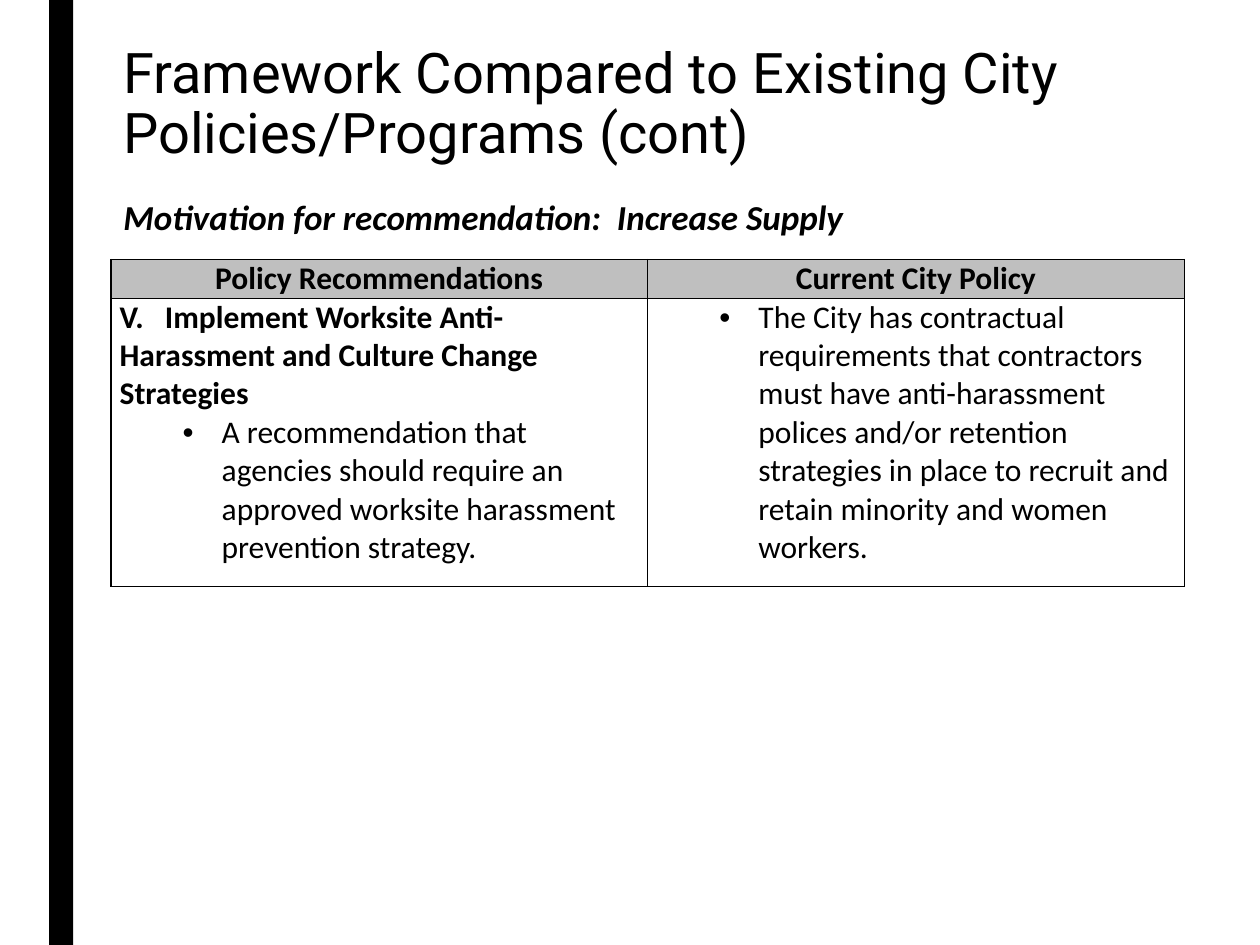
import pptx
import pptx.dml.color
import pptx.enum.shapes
import pptx.enum.text
import pptx.oxml
import pptx.oxml.ns
import pptx.util
from pptx.util import Inches

BLACK = "000000"
HEADER_GRAY = "BFBFBF"
HEADERS = ["Policy Recommendations", "Current City Policy"]
STRATEGY = "V.\tImplement Worksite Anti-Harassment and Culture Change Strategies"
RECOMMENDATION = (
    "A recommendation that agencies should require an approved worksite "
    "harassment prevention strategy."
)
CITY_POLICY = (
    "The City has contractual requirements that contractors must have "
    "anti-harassment polices and/or retention strategies in place to recruit "
    "and retain minority and women workers."
)


def color(hex_value):
    """Return the colour for a hex string."""
    return pptx.dml.color.RGBColor.from_string(hex_value)


def add_xml(parent, tag, attributes="", inner=""):
    """Append a DrawingML element to parent."""
    namespace = pptx.oxml.ns.nsdecls("a")
    parent.append(pptx.oxml.parse_xml(
        f"<a:{tag} {namespace} {attributes}>{inner}</a:{tag}>"))


def format_paragraph(paragraph, size, font="Calibri", bold=False, italic=False):
    """Style every run of a paragraph."""
    for run in paragraph.runs:
        run.font.name = font
        run.font.size = pptx.util.Pt(size)
        run.font.bold = bold
        run.font.italic = italic
        run.font.color.rgb = color(BLACK)


def add_side_bar(slide, left, top, width, height):
    """Draw the vertical black bar."""
    bar = slide.shapes.add_shape(
        pptx.enum.shapes.MSO_SHAPE.RECTANGLE, left, top, width, height)
    bar.shadow.inherit = False
    bar.fill.solid()
    bar.fill.fore_color.rgb = color(BLACK)
    bar.line.fill.background()


def add_heading(slide, box, text, size, line_spacing=None, **style):
    """Place a vertically centred line of heading text in a box."""
    heading = slide.shapes.add_textbox(*box).text_frame
    heading.word_wrap = True
    heading.vertical_anchor = pptx.enum.text.MSO_ANCHOR.MIDDLE
    heading.text = text
    heading.paragraphs[0].line_spacing = line_spacing
    format_paragraph(heading.paragraphs[0], size, **style)


def format_cell(cell, edges, fill=None):
    """Set a cell's margins, border widths by side and fill."""
    cell.margin_left = cell.margin_right = Inches(0.07)
    cell.margin_top = cell.margin_bottom = 0
    properties = cell._tc.get_or_add_tcPr()
    for side, points in edges.items():
        add_xml(properties, f"ln{side}", f'w="{pptx.util.Pt(points)}"',
                f'<a:solidFill><a:srgbClr val="{BLACK}"/></a:solidFill>')
    if fill:
        cell.fill.solid()
        cell.fill.fore_color.rgb = color(fill)
    else:
        cell.fill.background()


def add_bullet(paragraph, text):
    """Fill a paragraph as an indented bullet."""
    paragraph.text = text
    paragraph.level = 1
    properties = paragraph._p.get_or_add_pPr()
    properties.set("marL", str(Inches(0.81)))
    properties.set("indent", str(Inches(-0.31)))
    add_xml(properties, "buFont", 'typeface="Arial"')
    add_xml(properties, "buChar", 'char="•"')
    format_paragraph(paragraph, 18)


def add_policy_table(slide, left, top, width, height):
    """Build the comparison of recommendations and city policy."""
    table = slide.shapes.add_table(2, 2, left, top, width, height).table
    header_height = Inches(0.3)
    table.rows[0].height = header_height
    table.rows[1].height = height - header_height
    for row in range(2):
        for column in range(2):
            edges = {
                "L": 0.5 if column else 1,
                "R": 1 if column else 0.5,
                "T": 0.5 if row else 1,
                "B": 1 if row else 0.5,
            }
            format_cell(table.cell(row, column), edges,
                        None if row else HEADER_GRAY)

    for column, header in enumerate(HEADERS):
        cell = table.cell(0, column)
        cell.text = header
        paragraph = cell.text_frame.paragraphs[0]
        paragraph.alignment = pptx.enum.text.PP_ALIGN.CENTER
        format_paragraph(paragraph, 18, bold=True)

    recommendations = table.cell(1, 0).text_frame
    strategy = recommendations.paragraphs[0]
    strategy.text = STRATEGY
    add_xml(strategy._p.get_or_add_pPr(), "tabLst",
            inner=f'<a:tab pos="{Inches(0.36)}" algn="l"/>')
    format_paragraph(strategy, 18, bold=True)
    add_bullet(recommendations.add_paragraph(), RECOMMENDATION)
    add_bullet(table.cell(1, 1).text_frame.paragraphs[0], CITY_POLICY)


def main():
    """Build and save the slide."""
    presentation = pptx.Presentation()
    presentation.slide_width = Inches(10)
    presentation.slide_height = Inches(7.5)
    slide = presentation.slides.add_slide(presentation.slide_layouts[6])
    left = Inches(0.88)
    add_side_bar(slide, Inches(0.39), 0, Inches(0.19), presentation.slide_height)
    add_policy_table(slide, left, Inches(2.06), Inches(8.52), Inches(2.59))
    add_heading(slide, (left, Inches(0.29), Inches(7.88), Inches(1.09)),
                "Framework Compared to Existing City Policies/Programs (cont)",
                32, line_spacing=0.89, font="Roboto")
    add_heading(slide, (left, Inches(1.5), Inches(7.72), Inches(0.44)),
                "Motivation for recommendation:  Increase Supply",
                20, bold=True, italic=True)
    presentation.save("out.pptx")


if __name__ == "__main__":
    main()
